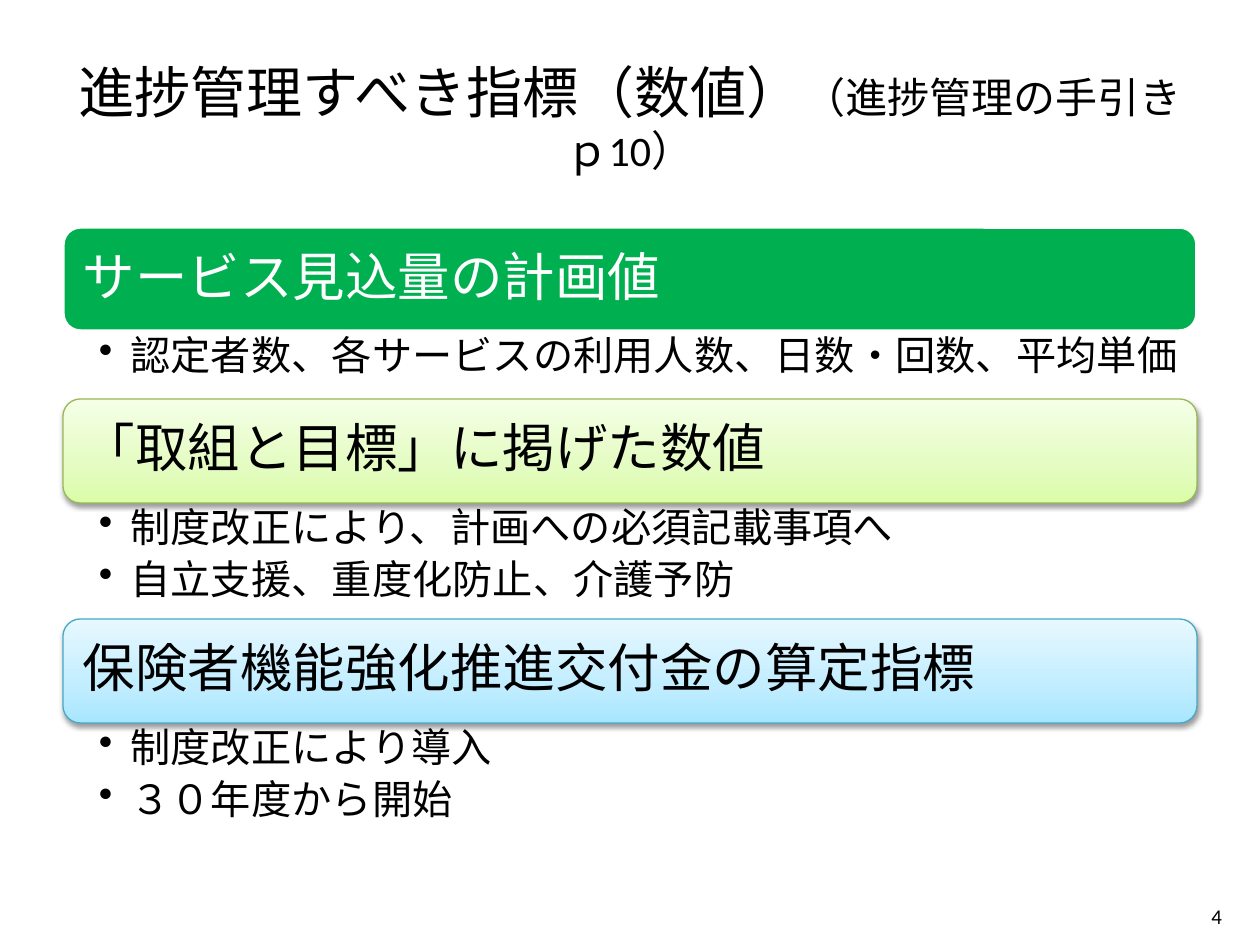
"""Build the slide listing the indicators whose progress is managed."""
from lxml.etree import SubElement
from pptx import Presentation
from pptx.dml.color import RGBColor
from pptx.enum.shapes import MSO_SHAPE as SHAPE
from pptx.enum.text import MSO_ANCHOR as ANCHOR, PP_ALIGN as ALIGN
from pptx.oxml.ns import qn
from pptx.util import Emu, Pt

COLORS = {
    "black": "000000", "white": "FFFFFF", "green": "00B050",
    "lime_line": "98B955", "blue_line": "46AAC5",
}
LIME = [(0, "DAFDA7"), (35, "E4FCC2"), (100, "F5FFE7")]
BLUE = [(0, "A7E6FF"), (35, "C1EDFF"), (100, "E7F8FF")]
FONT = "Calibri"

TITLE = [("進捗管理すべき指標（数値）", 32), ("（進捗管理の手引きｐ10）", 24)]
PAGE_NUMBER = "4"
SECTIONS = [
    {"heading": "サービス見込量の計画値", "ink": "white",
     "line": "white", "line_pt": 2, "stops": None,
     "items": ["認定者数、各サービスの利用人数、日数・回数、平均単価"], "height": 68},
    {"heading": "「取組と目標」に掲げた数値", "ink": "black",
     "line": "lime_line", "line_pt": 0.75, "stops": LIME,
     "items": ["制度改正により、計画への必須記載事項へ", "自立支援、重度化防止、介護予防"],
     "height": 116},
    {"heading": "保険者機能強化推進交付金の算定指標", "ink": "black",
     "line": "blue_line", "line_pt": 0.75, "stops": BLUE,
     "items": ["制度改正により導入", "３０年度から開始"], "height": 116},
]
LEFT, TOP, WIDTH, BAR_HEIGHT = 63, 227, 1134, 104


def px(n):
    return Emu(round(n * 914400 / 126))


def rgb(name):
    return RGBColor.from_string(COLORS[name])


def style(font, size, color="black"):
    font.name, font.size = FONT, Pt(size)
    font.color.rgb = rgb(color)


def frame(sp, insets, anchor):
    tf = sp.text_frame
    tf.word_wrap = True
    tf.vertical_anchor = anchor
    tf.margin_left, tf.margin_top, tf.margin_right, tf.margin_bottom = map(px, insets)
    return tf


def add_box(s, box, insets, anchor=ANCHOR.MIDDLE):
    return frame(s.shapes.add_textbox(*map(px, box)), insets, anchor)


def fill_gradient(sp, stops):
    sp.fill.gradient()
    sp.fill.gradient_angle = 90
    gs_list = sp._element.spPr.find(".//" + qn("a:gsLst"))
    gs_list.clear()
    for pos, color in stops:
        gs = SubElement(gs_list, qn("a:gs"), pos=str(pos * 1000))
        SubElement(gs, qn("a:srgbClr"), val=color)


def add_shadow(sp):
    effects = sp._element.spPr.find(qn("a:effectLst"))
    outer = SubElement(effects, qn("a:outerShdw"), blurRad="40000", dist="20000",
                       dir="5400000", rotWithShape="0")
    color = SubElement(outer, qn("a:srgbClr"), val=COLORS["black"])
    SubElement(color, qn("a:alpha"), val="38000")


def add_bar(s, top, section):
    sp = s.shapes.add_shape(SHAPE.ROUNDED_RECTANGLE,
                            *map(px, (LEFT, top, WIDTH, BAR_HEIGHT)))
    sp.shadow.inherit = False
    sp.line.color.rgb = rgb(section["line"])
    sp.line.width = Pt(section["line_pt"])
    if section["stops"]:
        fill_gradient(sp, section["stops"])
        add_shadow(sp)
    else:
        sp.fill.solid()
        sp.fill.fore_color.rgb = rgb("green")
    p = frame(sp, (15, 15, 15, 15), ANCHOR.MIDDLE).paragraphs[0]
    p.text, p.alignment, p.line_spacing = section["heading"], ALIGN.LEFT, 0.9
    style(p.font, 30, section["ink"])


def add_bullets(s, top, section):
    tf = add_box(s, (LEFT, top, WIDTH, section["height"]), (36, 5, 5, 5), ANCHOR.TOP)
    tf.text = "\n".join(section["items"])
    for p in tf.paragraphs:
        p.line_spacing, p.space_after = 0.9, Pt(4.6)
        style(p.font, 23)
        props = p._p.get_or_add_pPr()
        props.set("marL", "228600")
        props.set("indent", "-228600")
        bullet = props.makeelement(qn("a:buChar"), {"char": "•"})
        props.find(qn("a:defRPr")).addprevious(bullet)


def main():
    prs = Presentation()
    prs.slide_width, prs.slide_height = px(1260), px(945)
    s = prs.slides.add_slide(prs.slide_layouts[6])

    p = add_box(s, (LEFT, 38, WIDTH, 157), (13, 6, 13, 6)).paragraphs[0]
    p.alignment = ALIGN.CENTER
    for text, size in TITLE:
        r = p.add_run()
        r.text = text
        style(r.font, size)

    top = TOP
    for section in SECTIONS:
        add_bar(s, top, section)
        add_bullets(s, top + BAR_HEIGHT, section)
        top += BAR_HEIGHT + section["height"]

    p = add_box(s, (941, 891, 294, 50), (13, 6, 13, 6)).paragraphs[0]
    p.text, p.alignment = PAGE_NUMBER, ALIGN.RIGHT
    style(p.font, 12)
    prs.save("out.pptx")


if __name__ == "__main__":
    main()
